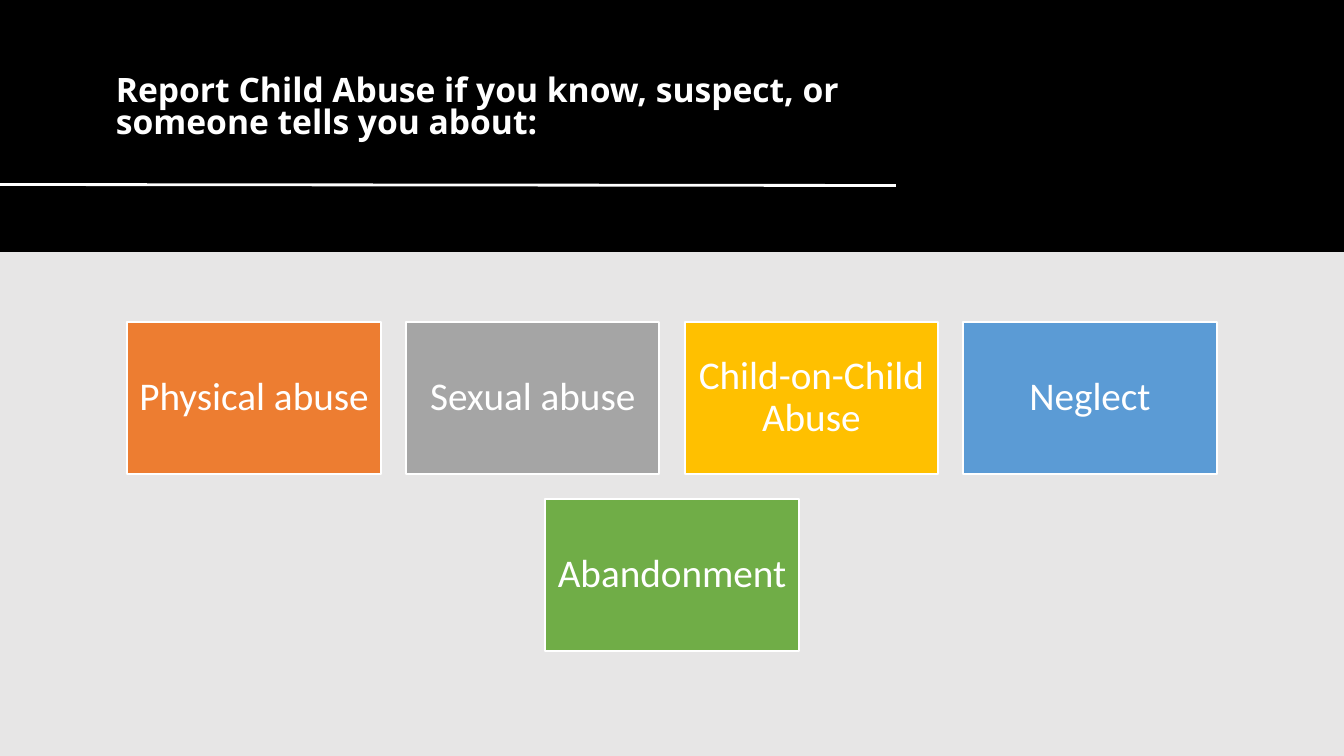
from dataclasses import dataclass

from lxml.etree import SubElement
from pptx import Presentation
from pptx.dml.color import RGBColor
from pptx.enum.shapes import MSO_CONNECTOR as Connector, MSO_SHAPE as Shape
from pptx.enum.text import MSO_ANCHOR as Anchor, MSO_AUTO_SIZE as AutoSize, PP_ALIGN as Align
from pptx.oxml.ns import qn
from pptx.util import Pt


@dataclass(frozen=True)
class Theme:
    page: str = "E7E6E6"
    band: str = "000000"
    light: str = "FFFFFF"
    title_font: str = "Open Sans"
    tile_font: str = "Calibri"
    title_size: float = 24
    tile_size: float = 28
    rule_width: float = 2
    outline_width: float = 1.5


THEME = Theme()
PAGE_WIDTH, PAGE_HEIGHT = 960, 540
BAND_HEIGHT = 180
TILES_PER_ROW = 4
TILES = [
    ("Physical abuse", "ED7D31"),
    ("Sexual abuse", "A5A5A5"),
    ("Child-on-Child Abuse", "FFC000"),
    ("Neglect", "5B9BD5"),
    ("Abandonment", "70AD47"),
]


def apply(target, formats):
    for name, value in formats.items():
        setattr(target, name, value)


def paint(fill, color):
    fill.solid()
    fill.fore_color.rgb = RGBColor.from_string(color)


def write(shape, text, frame_format, para_format, font_format):
    frame = shape.text_frame
    frame.text = text
    apply(frame, {"word_wrap": True, "auto_size": AutoSize.NONE, **frame_format})
    para = frame.paragraphs[0]
    apply(para, para_format)
    span = para.runs[0]
    apply(span.font, font_format)
    span.font.color.rgb = RGBColor.from_string(THEME.light)


def add_header(page, left, top, width, height):
    band = page.shapes.add_shape(Shape.RECTANGLE, Pt(left), Pt(top), Pt(width), Pt(height))
    band.shadow.inherit = False
    paint(band.fill, THEME.band)
    band.line.fill.background()
    # The band lies behind the title placeholder.
    band.element.getparent().insert(2, band.element)

    title = page.shapes.title
    apply(title, {"left": Pt(left + 75.6), "top": Pt(top + 33.8),
                  "width": Pt(564.5), "height": Pt(97.2)})
    write(title, "Report Child Abuse if you know, suspect, or someone tells you about:",
          {"vertical_anchor": Anchor.BOTTOM, "margin_bottom": Pt(30)},
          {"line_spacing": 0.8, "alignment": Align.LEFT},
          {"name": THEME.title_font, "size": Pt(THEME.title_size), "bold": True})

    rule = page.shapes.add_connector(Connector.STRAIGHT, Pt(left), Pt(top + 131.8),
                                     Pt(left + 640), Pt(top + 132.5))
    paint(rule.line.fill, THEME.light)
    rule.line.width = Pt(THEME.rule_width)
    SubElement(rule.element.spPr, qn("a:effectLst"))


def add_tile(page, text, color, left, top, width, height):
    tile = page.shapes.add_shape(Shape.RECTANGLE, Pt(left), Pt(top), Pt(width), Pt(height))
    tile.shadow.inherit = False
    paint(tile.fill, color)
    paint(tile.line.fill, THEME.light)
    tile.line.width = Pt(THEME.outline_width)
    margins = {f"margin_{side}": Pt(8.4) for side in ("left", "top", "right", "bottom")}
    write(tile, text, {"vertical_anchor": Anchor.MIDDLE, **margins},
          {"alignment": Align.CENTER, "line_spacing": 0.9},
          {"name": THEME.tile_font, "size": Pt(THEME.tile_size)})


def add_tile_rows(page, left, top, width, gap=18.1, tile_height=108.6):
    """Fill the width with rows of equal tiles, centring a short row."""
    tile_width = (width - gap * (TILES_PER_ROW - 1)) / TILES_PER_ROW
    for row, start in enumerate(range(0, len(TILES), TILES_PER_ROW)):
        tiles = TILES[start:start + TILES_PER_ROW]
        row_width = len(tiles) * (tile_width + gap) - gap
        row_left = left + (width - row_width) / 2
        for column, (text, color) in enumerate(tiles):
            add_tile(page, text, color, row_left + column * (tile_width + gap),
                     top + row * (tile_height + gap), tile_width, tile_height)


def main():
    deck = Presentation()
    apply(deck, {"slide_width": Pt(PAGE_WIDTH), "slide_height": Pt(PAGE_HEIGHT)})
    page = deck.slides.add_slide(deck.slide_layouts.get_by_name("Title Only"))
    paint(page.background.fill, THEME.page)
    add_header(page, 0, 0, PAGE_WIDTH, BAND_HEIGHT)
    add_tile_rows(page, 91, 229.8, PAGE_WIDTH - 2 * 91)
    deck.save("out.pptx")


if __name__ == "__main__":
    main()
